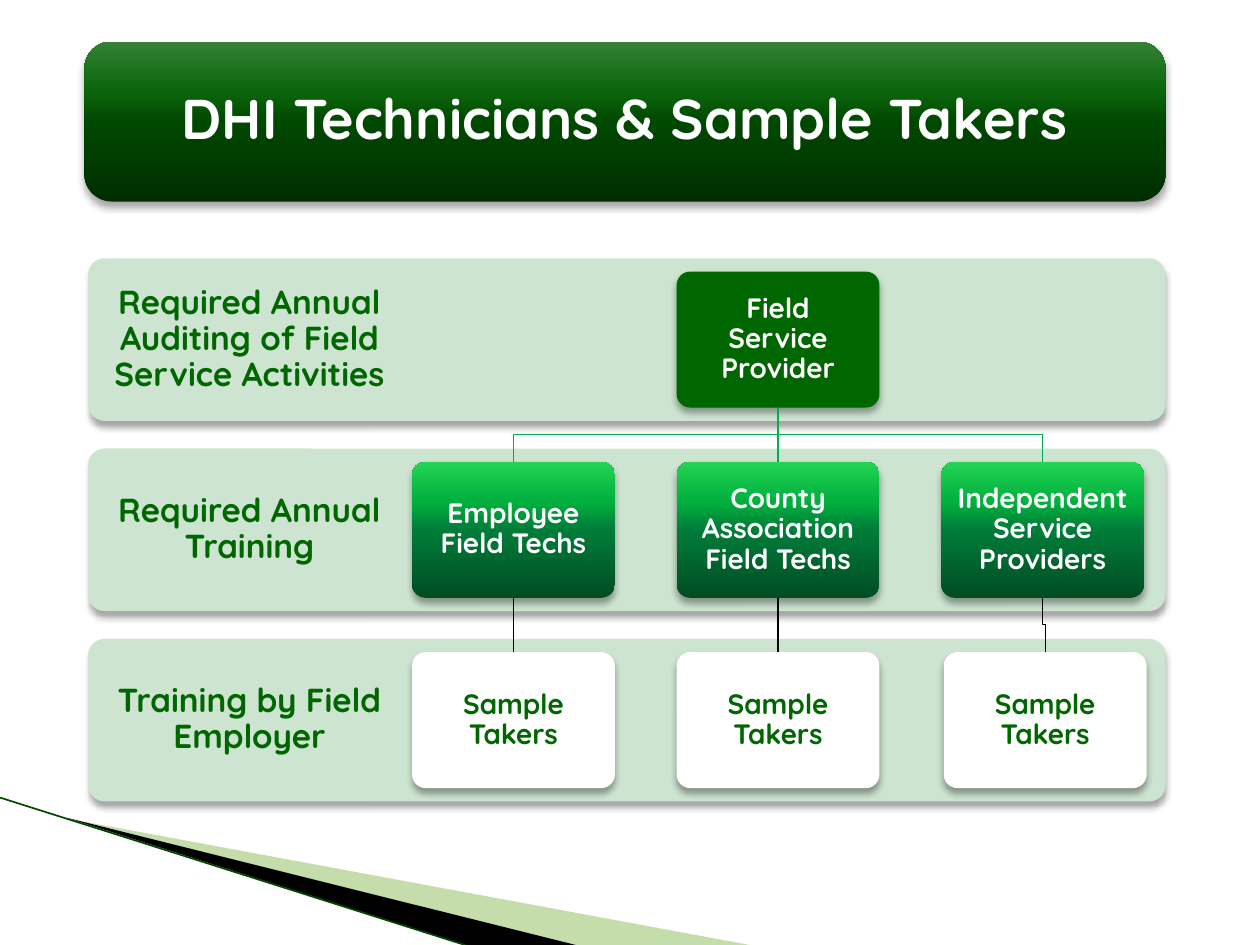
from lxml import etree
from pptx import Presentation
from pptx import util as u
from pptx.dml.color import RGBColor
from pptx.enum import shapes, text
from pptx.oxml import ns

FONT = "Quicksand"
WHITE = RGBColor(0xFF, 0xFF, 0xFF)
BLACK = RGBColor(0x00, 0x00, 0x00)
DARK_GREEN = RGBColor(0x00, 0x66, 0x00)
BAND_GREEN = RGBColor(0xCC, 0xE4, 0xD0)
LINK_GREEN = RGBColor(0x00, 0xB0, 0x50)
LEAF_GREEN = RGBColor(0x6E, 0xAA, 0x2E)
EDGE_GREEN = RGBColor(0x00, 0x48, 0x00)
# Gradients run from bottom to top
STOPS = (0, 50, 70, 100)
TITLE_GRADIENT = (RGBColor(0x00, 0x2D, 0x00), RGBColor(0x00, 0x48, 0x00),
                  RGBColor(0x0C, 0x67, 0x0C), RGBColor(0x35, 0x81, 0x35))
CARD_GRADIENT = (RGBColor(0x00, 0x4D, 0x23), RGBColor(0x00, 0x7C, 0x39),
                 RGBColor(0x00, 0xAF, 0x3E), RGBColor(0x23, 0xD4, 0x54))

# Grid, in inches
BAND_LEFT, BAND_TOP, BAND_W, BAND_H, ROW_PITCH = 0.7, 2.05, 8.55, 1.29, 1.51
CARD_LEFT, CARD_W, CARD_H, COL_PITCH = 3.27, 1.61, 1.08, 2.1
CARD_INSET = (BAND_H - CARD_H) / 2
LABEL_W = 2.56


def add_xml(parent, tag, **attributes):
    return etree.SubElement(parent, ns.qn(tag), attributes)


def set_fill(shape, fill):
    """Fill with one colour, or with a gradient for several colours."""
    if isinstance(fill, RGBColor):
        shape.fill.solid()
        shape.fill.fore_color.rgb = fill
        return
    shape.fill.gradient()
    shape.fill.gradient_angle = 90
    stop_list = shape.element.spPr.find(".//" + ns.qn("a:gsLst"))
    for old_stop in list(stop_list):
        stop_list.remove(old_stop)
    for position, color in zip(STOPS, fill):
        stop = add_xml(stop_list, "a:gs", pos=str(position * 1000))
        add_xml(stop, "a:srgbClr", val=str(color))


def cast_shadow(shape):
    shape.shadow.inherit = False
    effects = shape.element.spPr.find(ns.qn("a:effectLst"))
    shadow = add_xml(effects, "a:outerShdw", blurRad=str(int(u.Pt(4))),
                     dist=str(int(u.Pt(3))), dir="5400000", rotWithShape="0")
    add_xml(add_xml(shadow, "a:srgbClr", val=str(BLACK)), "a:alpha", val="35000")


def write_text(shape, words, size=16, color=WHITE, inset=0.1):
    frame = shape.text_frame
    frame.word_wrap = True
    frame.vertical_anchor = text.MSO_ANCHOR.MIDDLE
    frame.margin_left = frame.margin_right = u.Inches(inset)
    frame.margin_top = frame.margin_bottom = u.Inches(inset)
    paragraph = frame.paragraphs[0]
    paragraph.alignment = text.PP_ALIGN.CENTER
    paragraph.line_spacing = 0.9
    run = paragraph.add_run()
    run.text = words
    run.font.name, run.font.size, run.font.bold = FONT, u.Pt(size), True
    run.font.color.rgb = color


def add_panel(slide, left, top, width, height, fill, corner=0.1):
    panel = slide.shapes.add_shape(shapes.MSO_SHAPE.ROUNDED_RECTANGLE,
                                   *map(u.Inches, (left, top, width, height)))
    panel.adjustments[0] = corner
    set_fill(panel, fill)
    panel.line.fill.background()
    cast_shadow(panel)
    return panel


def add_band(slide, row, label):
    top = BAND_TOP + row * ROW_PITCH
    add_panel(slide, BAND_LEFT, top, BAND_W, BAND_H, BAND_GREEN)
    label_box = slide.shapes.add_textbox(
        *map(u.Inches, (BAND_LEFT, top, LABEL_W, BAND_H)))
    write_text(label_box, label, size=19, color=DARK_GREEN, inset=0.15)


def add_card(slide, col, row, words, fill, color=WHITE, shift=0):
    card = add_panel(slide, CARD_LEFT + col * COL_PITCH + shift,
                     BAND_TOP + row * ROW_PITCH + CARD_INSET, CARD_W, CARD_H, fill)
    write_text(card, words, color=color)
    return card


def add_outline(slide, points, closed):
    """Draw a polygon or an open bent line through points in EMU."""
    builder = slide.shapes.build_freeform(*points[0])
    builder.add_line_segments(points[1:], close=closed)
    outline = builder.convert_to_shape()
    outline.shadow.inherit = False
    return outline


def add_line(slide, start, end):
    line = slide.shapes.add_connector(shapes.MSO_CONNECTOR.STRAIGHT, *start, *end)
    add_xml(line.element.spPr, "a:effectLst")
    return line


def link_cards(slide, parent, child, color):
    """Join two cards: straight when they are in line, bent halfway otherwise."""
    start = (parent.left + parent.width // 2, parent.top + parent.height)
    end = (child.left + child.width // 2, child.top)
    if start[0] == end[0]:
        link = add_line(slide, start, end)
        link.begin_connect(parent, 2)
        link.end_connect(child, 0)
    else:
        middle = (start[1] + end[1]) // 2
        link = add_outline(slide, [start, (start[0], middle), (end[0], middle), end], False)
        link.fill.background()
    link.line.color.rgb = color
    link.line.width = u.Pt(0.75)


def add_wedge(slide, points, color, opacity=100):
    wedge = add_outline(slide, [(u.Inches(x), u.Inches(y)) for x, y in points], True)
    set_fill(wedge, color)
    wedge.line.fill.background()
    if opacity < 100:
        paint = wedge.element.spPr.find(ns.qn("a:solidFill"))
        add_xml(paint[0], "a:alpha", val=str(opacity * 1000))


def add_corner(slide):
    add_wedge(slide, [(0.55, 6.5), (5.95, 7.5), (4.56, 7.5)], LEAF_GREEN, opacity=40)
    add_wedge(slide, [(0.53, 6.49), (4.57, 7.5), (3.7, 7.5)], BLACK)
    edge = add_line(slide, (0, u.Inches(6.33)), (u.Inches(3.69), u.Inches(7.5)))
    edge.line.color.rgb = EDGE_GREEN
    edge.line.width = u.Pt(0.95)


def main():
    deck = Presentation()
    deck.slide_width, deck.slide_height = u.Inches(10), u.Inches(7.5)
    slide = deck.slides.add_slide(deck.slide_layouts[6])

    # Corner decoration and title
    add_corner(slide)
    title = add_panel(slide, 0.67, 0.33, 8.58, 1.27, TITLE_GRADIENT, corner=0.17)
    write_text(title, "DHI Technicians & Sample Takers", size=32)

    # Bands with their labels
    for row, label in enumerate(("Required Annual Auditing of Field Service Activities",
                                 "Required Annual Training",
                                 "Training by Field Employer")):
        add_band(slide, row, label)

    # Hierarchy; the last sample takers stand slightly to the right
    provider = add_card(slide, 1, 0, "Field Service Provider", DARK_GREEN)
    groups = (("Employee Field Techs", 0),
              ("County Association Field Techs", 0),
              ("Independent Service Providers", 0.02))
    for col, (name, shift) in enumerate(groups):
        group = add_card(slide, col, 1, name, CARD_GRADIENT)
        takers = add_card(slide, col, 2, "Sample Takers", WHITE, DARK_GREEN, shift)
        link_cards(slide, provider, group, LINK_GREEN)
        link_cards(slide, group, takers, BLACK)

    deck.save("out.pptx")


if __name__ == "__main__":
    main()
